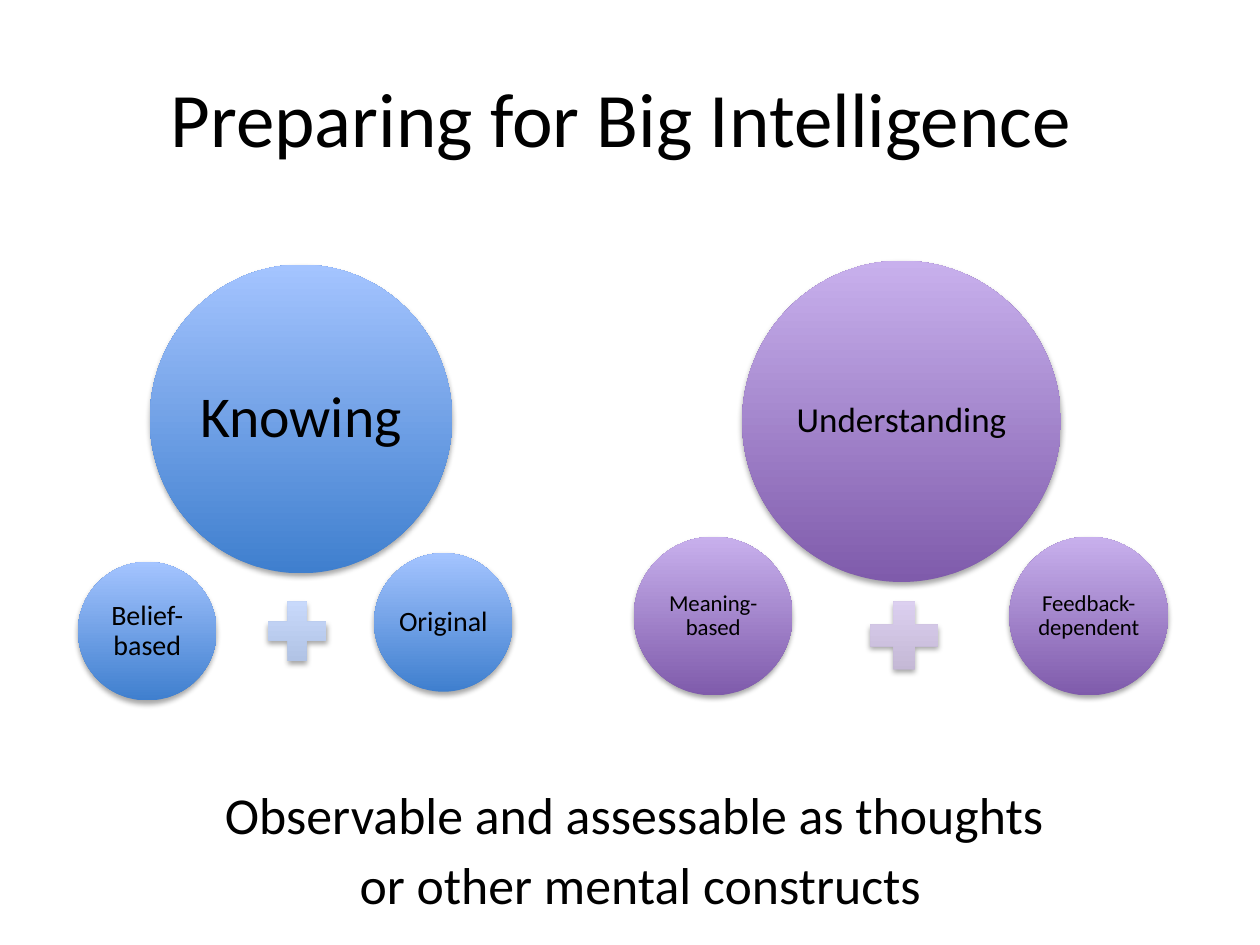
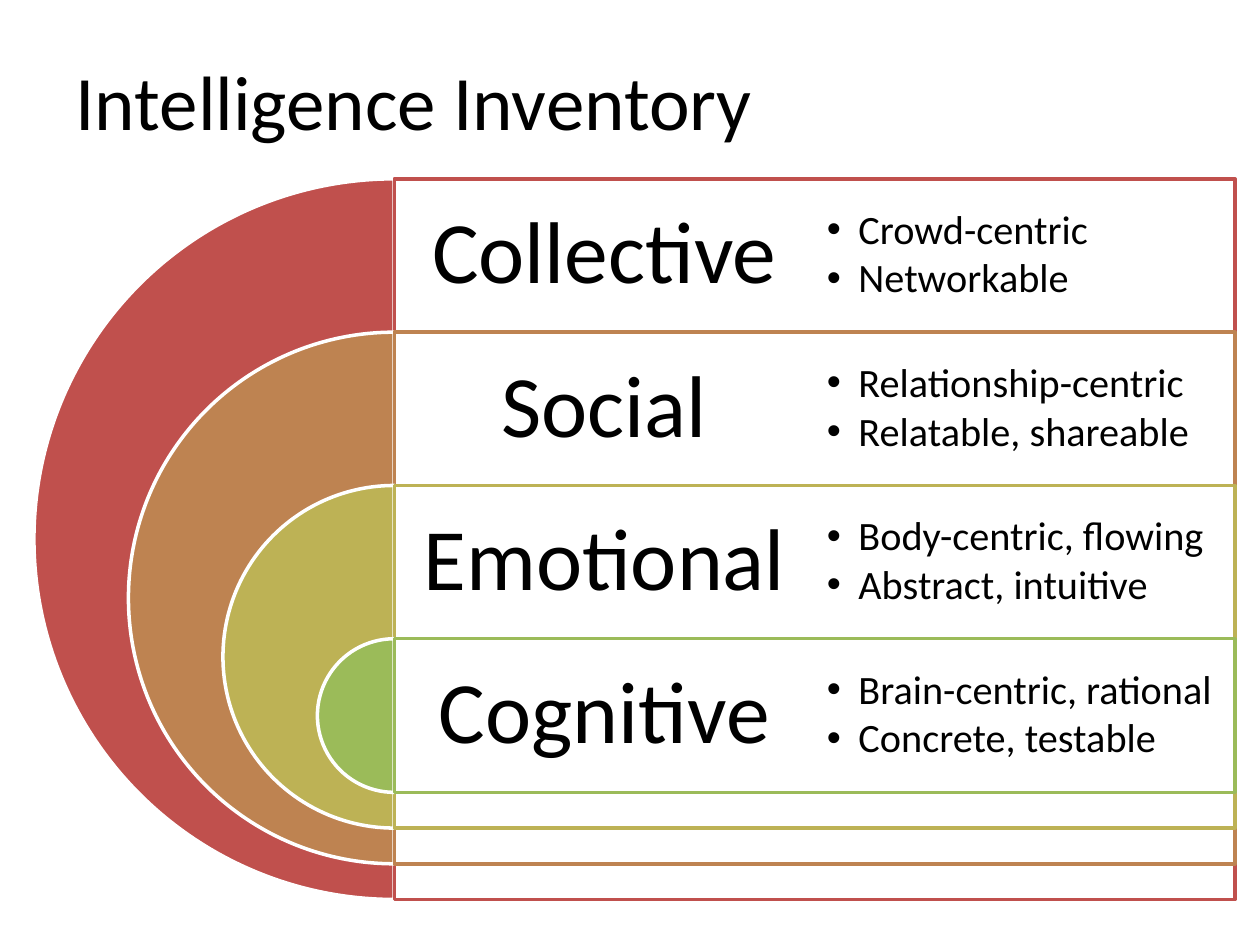
from dataclasses import dataclass

from lxml import etree
from pptx import Presentation
from pptx.dml.color import RGBColor
from pptx.enum.shapes import MSO_SHAPE
from pptx.enum.text import MSO_ANCHOR, PP_ALIGN
from pptx.oxml.ns import qn
from pptx.util import Pt

ELLIPSE, PLUS = MSO_SHAPE.OVAL, MSO_SHAPE.MATH_PLUS
PIE, RECTANGLE = MSO_SHAPE.PIE, MSO_SHAPE.RECTANGLE
LEFT, CENTER = PP_ALIGN.LEFT, PP_ALIGN.CENTER
TOP, MIDDLE = MSO_ANCHOR.TOP, MSO_ANCHOR.MIDDLE

FONT = "Calibri"
TITLE_ONLY = 5
BLACK = RGBColor(0x00, 0x00, 0x00)
WHITE = RGBColor(0xFF, 0xFF, 0xFF)
RED = RGBColor(0xC0, 0x50, 0x4D)
ORANGE = RGBColor(0xBE, 0x83, 0x51)
OLIVE = RGBColor(0xBD, 0xB2, 0x55)
GREEN = RGBColor(0x9B, 0xBB, 0x59)
BLUE = (RGBColor(0x3F, 0x7F, 0xCE), RGBColor(0xA4, 0xC4, 0xFF))
PALE_BLUE = (RGBColor(0xAD, 0xBF, 0xE1), RGBColor(0xCC, 0xDD, 0xFF))
PURPLE = (RGBColor(0x7F, 0x5B, 0xAB), RGBColor(0xC8, 0xB0, 0xED))
PALE_PURPLE = (RGBColor(0xC0, 0xB4, 0xD1), RGBColor(0xE0, 0xD4, 0xF4))

INVENTORY = [
    ("Collective", ["Crowd-centric", "Networkable"], RED),
    ("Social", ["Relationship-centric", "Relatable, shareable"], ORANGE),
    ("Emotional", ["Body-centric, flowing", "Abstract, intuitive"], OLIVE),
    ("Cognitive", ["Brain-centric, rational", "Concrete, testable"], GREEN),
]


@dataclass
class Circle:
    """A labelled circle; its box is relative to its cluster."""

    label: str
    size: float
    box: tuple


def points(box):
    """Turn a box of plain numbers into lengths."""
    return [Pt(value) for value in box]


def write(frame, lines, size, align=CENTER, anchor=MIDDLE, inset=1.5,
          spacing=0.9, before=0, after=0):
    """Fill a text frame with one paragraph per line and return them."""
    frame.word_wrap = True
    frame.vertical_anchor = anchor
    frame.margin_left = frame.margin_right = Pt(inset)
    frame.margin_top = frame.margin_bottom = Pt(inset)
    paragraphs = [frame.paragraphs[0]] + [frame.add_paragraph() for _ in lines[1:]]
    for paragraph, line in zip(paragraphs, lines):
        paragraph.alignment = align
        paragraph.line_spacing = spacing
        paragraph.space_before, paragraph.space_after = Pt(before), Pt(after)
        run = paragraph.add_run()
        run.text = line
        run.font.name, run.font.size = FONT, Pt(size)
        run.font.color.rgb = BLACK
    return paragraphs


def add_bullet(paragraph):
    """Give a paragraph a hanging round bullet."""
    properties = paragraph._p.get_or_add_pPr()
    properties.set("marL", str(Pt(18)))
    properties.set("indent", str(Pt(-18)))
    etree.SubElement(properties, qn("a:buFont"), typeface="Arial")
    etree.SubElement(properties, qn("a:buChar"), char="•")


def add_soft_shadow(shape):
    """Put a faint shadow below a shape."""
    shape.shadow.inherit = False
    effects = shape._element.spPr.find(qn("a:effectLst"))
    shadow = etree.SubElement(effects, qn("a:outerShdw"), blurRad=str(Pt(3.1)),
                              dist=str(Pt(1.8)), dir="5400000", rotWithShape="0")
    color = etree.SubElement(shadow, qn("a:srgbClr"), val=str(BLACK))
    etree.SubElement(color, qn("a:alpha"), val="35000")


def add_glossy(slide, preset, box, shades):
    """Add a borderless shape that lightens from bottom to top."""
    shape = slide.shapes.add_shape(preset, *points(box))
    shape.fill.gradient()
    shape.fill.gradient_angle = 90
    for stop, shade in zip(shape.fill.gradient_stops, shades):
        stop.color.rgb = shade
    shape.line.fill.background()
    add_soft_shadow(shape)
    return shape


def add_flat(slide, preset, box, fill, line):
    """Add a flat shape with a two-point outline."""
    shape = slide.shapes.add_shape(preset, *points(box))
    shape.shadow.inherit = False
    shape.fill.solid()
    shape.fill.fore_color.rgb = fill
    shape.line.color.rgb = line
    shape.line.width = Pt(2)
    return shape


def add_text(slide, box, lines, size, **style):
    """Add a text box and return its paragraphs."""
    frame = slide.shapes.add_textbox(*points(box)).text_frame
    return write(frame, lines, size, **style)


def add_titled_slide(deck, title, box, align):
    """Add a slide whose title fills the given box."""
    slide = deck.slides.add_slide(deck.slide_layouts[TITLE_ONLY])
    heading = slide.shapes.title
    heading.left, heading.top, heading.width, heading.height = points(box)
    write(heading.text_frame, [title], 44, align=align, inset=7.2, spacing=1.0)
    return slide


def add_cluster(slide, left, top, circles, plus_box, shades, pale_shades):
    """Add a plus sign and circles, the last circle in front."""

    def place(box):
        x, y, width, height = box
        return left + x, top + y, width, height

    add_glossy(slide, PLUS, place(plus_box), pale_shades)
    for circle in circles:
        disc = add_glossy(slide, ELLIPSE, place(circle.box), shades)
        write(disc.text_frame, [circle.label], circle.size)


def add_inventory(slide, left, top, diameter, panel_width, row, shrink):
    """Add nested half discs, each opening into a framed row."""
    axis = left + diameter / 2
    column = panel_width / 2
    for index, (name, traits, color) in enumerate(INVENTORY):
        size = diameter - index * shrink
        y = top + index * row
        half_disc = add_flat(slide, PIE, (axis - size / 2, y, size, size), color, WHITE)
        half_disc.adjustments[0], half_disc.adjustments[1] = 54, 162
        add_flat(slide, RECTANGLE, (axis, y, panel_width, size), WHITE, color)
        add_text(slide, (axis, y, column, row), [name], 50, inset=15)
        for trait in add_text(slide, (axis + column, y, column, row), traits, 23,
                              align=LEFT, inset=7.2, after=3):
            add_bullet(trait)


def build_preparing(deck):
    """Build the slide on knowing and understanding."""
    slide = add_titled_slide(deck, "Preparing for Big Intelligence ",
                             (36, 21.6, 648, 90), CENTER)
    add_text(slide, (100.8, 443.5, 530.6, 76.3),
             ["Observable and assessable as thoughts ", "or other mental constructs"],
             29.6, anchor=TOP, inset=3.6, spacing=1.0, before=5)
    knowing = [
        Circle("Original", 16, (169.2, 164.9, 79.2, 79.2)),
        Circle("Belief-based", 16, (0, 169.9, 79.2, 79.2)),
        Circle("Knowing", 33, (41, 0, 172.8, 176.4)),
    ]
    understanding = [
        Circle("Meaning-based", 13, (0, 157.7, 90.7, 90.7)),
        Circle("Feedback-dependent", 13, (214.6, 157.7, 90.7, 90.7)),
        Circle("Understanding", 20, (61.9, 0, 182.2, 183.6)),
    ]
    add_cluster(slide, 44.6, 151.2, knowing, (102.2, 186.5, 46, 46), BLUE, PALE_BLUE)
    add_cluster(slide, 362.2, 149, understanding, (128.2, 187.9, 52.6, 52.6),
                PURPLE, PALE_PURPLE)


def build_inventory(deck):
    """Build the slide on the four kinds of intelligence."""
    slide = add_titled_slide(deck, "Intelligence Inventory", (36, 22.3, 648, 69.1), LEFT)
    add_inventory(slide, left=19.4, top=102.2, diameter=411.8, panel_width=480.4,
                  row=87.6, shrink=108)


def main():
    """Build and save the deck."""
    deck = Presentation()
    deck.slide_width, deck.slide_height = Pt(720), Pt(540)
    build_preparing(deck)
    build_inventory(deck)
    deck.save("out.pptx")


if __name__ == "__main__":
    main()
